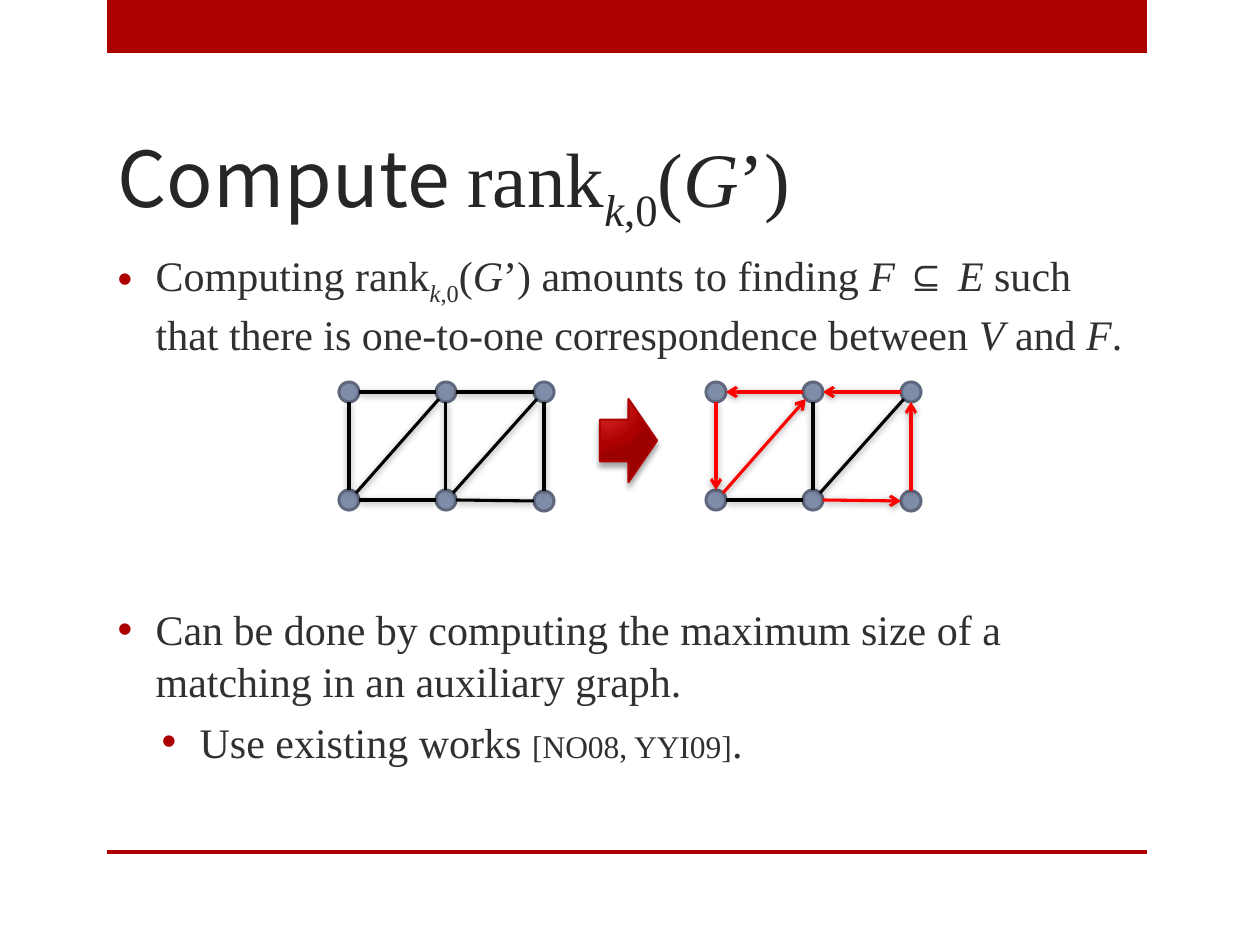
from lxml import etree
from pptx import Presentation
from pptx.dml.color import RGBColor
from pptx.enum import shapes, text
from pptx.oxml import ns
from pptx.util import Emu, Pt

PX = 914400 / 126
RED, BLACK, EDGE_RED = "AD0101", "000000", "FF0000"
SERIF, SANS = "Times New Roman", "Noto Sans CJK JP"
COLUMNS, ROWS, RADIUS = (0, 97, 195), (392, 500), 10

# Edges join (column, row) nodes; the chosen ones also have a direction
EDGES = [((0, 0), (1, 0)), ((0, 0), (0, 1)), ((1, 0), (1, 1)),
         ((0, 1), (1, 1)), ((0, 1), (1, 0)), ((1, 1), (2, 1)),
         ((1, 0), (2, 0)), ((2, 1), (2, 0)), ((1, 1), (2, 0))]
CHOSEN = [((1, 0), (0, 0)), ((0, 0), (0, 1)), ((0, 1), (1, 0)),
          ((1, 1), (2, 1)), ((2, 1), (2, 0)), ((2, 0), (1, 0))]

# Runs are (text, style): i for italic, s for subscript
RANK = [("k", "is"), (",0", "s"), ("(", ""), ("G", "i")]
FINDING = [("Computing rank", ""), *RANK, ("’) amounts to finding ", ""),
           ("F", "i"), (" ⊆ ", ""), ("E", "i"),
           (" such that there is one-to-one correspondence between ", ""),
           ("V", "i"), (" and ", ""), ("F", "i"), (".", "")]
MATCHING = [("Can be done by computing the maximum size of a matching "
             "in an auxiliary graph.", "")]
WORKS = [("Use existing works ", ""), ("[NO08, YYI09]", ""), (".", "")]


def px(n):
    return Emu(round(n * PX))


def color(value):
    return RGBColor.from_string(value)


def add_xml(parent, tag, **attributes):
    element = etree.SubElement(parent, ns.qn(tag))
    for key, value in attributes.items():
        element.set(key, str(value))
    return element


def add_shadow(shape, alpha, blur, distance, angle):
    effects = add_xml(shape._element.spPr, "a:effectLst")
    outer = add_xml(effects, "a:outerShdw", blurRad=Pt(blur), dist=Pt(distance),
                    dir=angle * 60000, rotWithShape=0)
    add_xml(add_xml(outer, "a:srgbClr", val=BLACK), "a:alpha", val=alpha * 1000)


def place(shape, left, top, width, height):
    shape.left, shape.top = px(left), px(top)
    shape.width, shape.height = px(width), px(height)


def write_runs(paragraph, runs, size, ink):
    for content, style in runs:
        run = paragraph.add_run()
        run.text = content
        font = run.font
        font.name, font.size, font.italic = SERIF, Pt(size), "i" in style
        font.color.rgb = color(ink)
        if "s" in style:
            font._element.set("baseline", "-25000")


def add_bullet(paragraph, runs, left, before, level=0):
    paragraph.level = level
    paragraph.space_before = Pt(before)
    paragraph.line_spacing = 1.03
    write_runs(paragraph, runs, 24, "303030")
    properties = paragraph._p.get_or_add_pPr()
    properties.set("marL", str(px(left)))
    properties.set("indent", str(-px(38)))
    add_xml(add_xml(properties, "a:buClr"), "a:srgbClr", val=RED)
    add_xml(properties, "a:buFont", typeface="Arial")
    add_xml(properties, "a:buChar", char="•")


def add_bar(slide, top, height):
    bar = slide.shapes.add_shape(shapes.MSO_SHAPE.RECTANGLE, px(107), px(top),
                                 px(1040), px(height))
    bar.shadow.inherit = False
    bar.fill.solid()
    bar.fill.fore_color.rgb = color(RED)
    bar.line.fill.background()


def node_center(left, node):
    column, row = node
    sag = 1 if node == (2, 1) else 0
    return left + COLUMNS[column], ROWS[row] + sag


def add_node(group, x, y):
    node = group.shapes.add_shape(shapes.MSO_SHAPE.OVAL, px(x - RADIUS), px(y - RADIUS),
                                  px(2 * RADIUS), px(2 * RADIUS))
    node.shadow.inherit = False
    node.fill.solid()
    node.fill.fore_color.rgb = color("808DA9")
    node.line.color.rgb = color("5F687D")
    node.line.width = Pt(1.75)


def add_edge(group, left, start, end, directed):
    # Ends sit on the node outlines, at one of eight compass points
    dx, dy = ((b > a) - (b < a) for a, b in zip(start, end))
    reach = RADIUS * (0.71 if dx and dy else 1)
    (x1, y1), (x2, y2) = node_center(left, start), node_center(left, end)
    edge = group.shapes.add_connector(
        shapes.MSO_CONNECTOR.STRAIGHT, px(x1 + dx * reach), px(y1 + dy * reach),
        px(x2 - dx * reach), px(y2 - dy * reach))
    edge.line.color.rgb = color(EDGE_RED if directed else BLACK)
    edge.line.width = Pt(1.75)
    if directed:
        add_xml(edge.line._get_or_add_ln(), "a:tailEnd", type="arrow")
    add_shadow(edge, 40, 4, 1, 88)


def add_graph(slide, left, chosen=()):
    group = slide.shapes.add_group_shape()
    for column in range(len(COLUMNS)):
        for row in range(len(ROWS)):
            add_node(group, *node_center(left, (column, row)))
    for start, end in EDGES:
        if (end, start) in chosen:
            start, end = end, start
        add_edge(group, left, start, end, (start, end) in chosen)


def add_step_arrow(slide):
    arrow = slide.shapes.add_shape(shapes.MSO_SHAPE.DOWN_ARROW, px(587), px(412),
                                   px(83), px(57))
    arrow.rotation = 270
    arrow.line.color.rgb = color(RED)
    arrow.line.width = Pt(1.25)
    properties = arrow._element.spPr
    gradient = add_xml(properties, "a:gradFill", rotWithShape=1)
    stops = add_xml(gradient, "a:gsLst")
    for position, shade in ((0, "E62F2F"), (76, RED), (100, "9C0101")):
        add_xml(add_xml(stops, "a:gs", pos=position * 1000), "a:srgbClr", val=shade)
    circle = add_xml(gradient, "a:path", path="circle")
    add_xml(circle, "a:fillToRect", l=15000, t=15000, r=100000, b=100000)
    properties.find(ns.qn("a:prstGeom")).addnext(gradient)
    add_shadow(arrow, 35, 3, 3, 90)


def fill_title(title):
    place(title, 105, 95, 1040, 147)
    title.text_frame.vertical_anchor = text.MSO_ANCHOR.BOTTOM
    title.text_frame.auto_size = text.MSO_AUTO_SIZE.NONE
    heading = title.text_frame.paragraphs[0]
    heading.alignment = text.PP_ALIGN.LEFT
    write_runs(heading, [("Compute ", ""), ("rank", ""), *RANK, ("’)", "")], 44, "262626")
    heading.runs[0].font.name = SANS


def fill_body(body):
    place(body, 105, 242, 1040, 609)
    frame = body.text_frame
    frame.auto_size = text.MSO_AUTO_SIZE.NONE
    add_bullet(frame.paragraphs[0], FINDING, 38, 4.8)
    # The wide gap leaves room for the graphs
    add_bullet(frame.add_paragraph(), MATCHING, 38, 139)
    works = frame.add_paragraph()
    add_bullet(works, WORKS, 82, 4.8, level=1)
    works.runs[1].font.size = Pt(18)


def main():
    deck = Presentation()
    deck.slide_width, deck.slide_height = px(1260), px(945)
    slide = deck.slides.add_slide(deck.slide_layouts[1])

    # Frame bars
    add_bar(slide, 0, 53)
    add_bar(slide, 850, 4)

    # Text
    fill_title(slide.shapes.title)
    fill_body(slide.placeholders[1])

    # Graph before and after choosing F
    add_graph(slide, 349)
    add_graph(slide, 716, CHOSEN)
    add_step_arrow(slide)

    deck.save("out.pptx")


if __name__ == "__main__":
    main()
